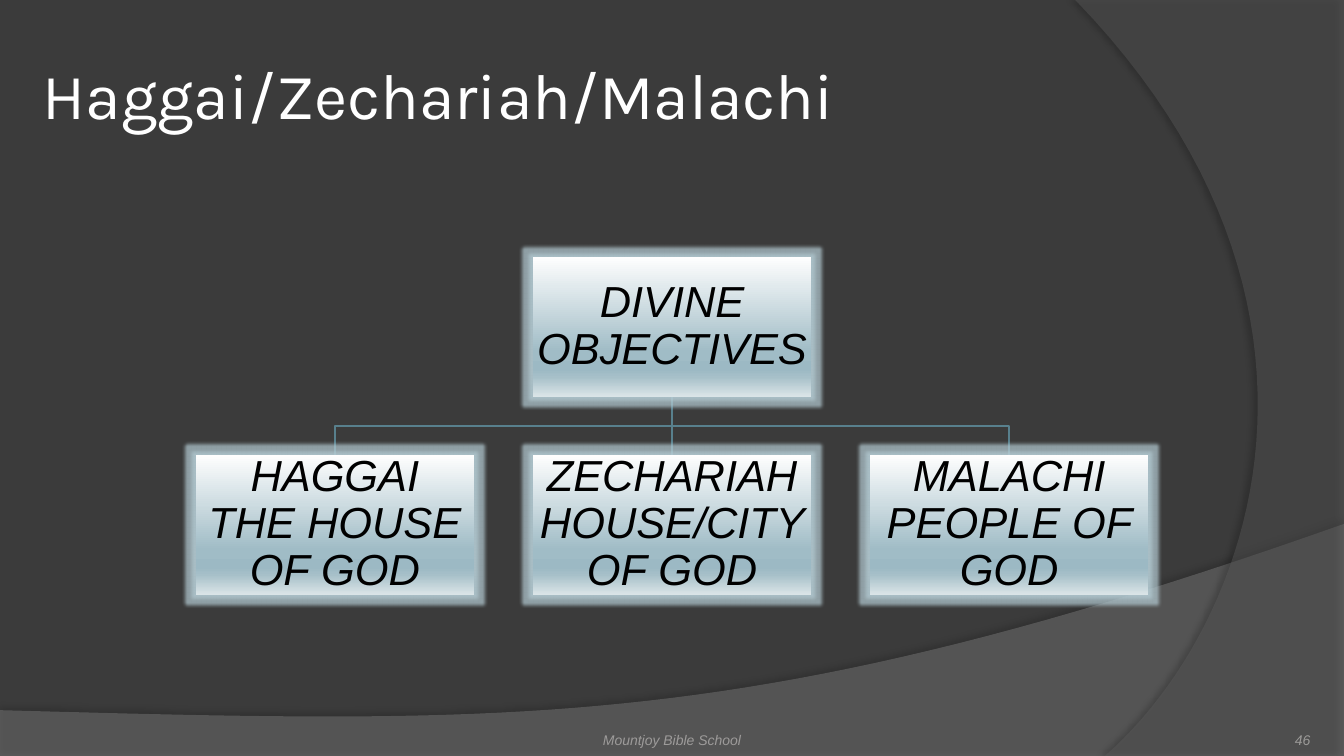
import pptx
import pptx.dml.color
import pptx.enum.dml
import pptx.enum.shapes
import pptx.enum.text
import pptx.oxml
import pptx.util

WIDTH, HEIGHT = pptx.util.Inches(13.333), pptx.util.Inches(7.5)
NAMESPACE = 'xmlns:a="http://schemas.openxmlformats.org/drawingml/2006/main"'
ALIGN = pptx.enum.text.PP_ALIGN
ANCHOR = pptx.enum.text.MSO_ANCHOR
CONNECTOR = pptx.enum.shapes.MSO_CONNECTOR
COLUMN_GAP, ROW_GAP = 0.21, 0.42
CARD_STOPS = [(0, "FEFEFE"), (68, "A0BCC6"), (81, "9CB9C4"), (86, "A7C0C9"), (100, "DAE4E7")]
ROOT = "DIVINE OBJECTIVES"
BRANCHES = ["HAGGAI\nTHE HOUSE OF GOD", "ZECHARIAH\nHOUSE/CITY OF GOD", "MALACHI\nPEOPLE OF GOD"]


def color(value):
    return pptx.dml.color.RGBColor.from_string(value)


def share(left, top, width, height):
    return (round(left * WIDTH), round(top * HEIGHT), round(width * WIDTH), round(height * HEIGHT))


def assign(target, values):
    for name, value in values.items():
        setattr(target, name, value)


def add_xml(parent, body):
    parent.append(pptx.oxml.parse_xml(body.replace(">", f" {NAMESPACE}>", 1)))


def set_effect(shape, effect):
    shape.shadow.inherit = False
    add_xml(shape.shadow._element.effectLst, effect)


def write(shape, text, size, fill, font="Arial", italic=True, align=ALIGN.CENTER,
          anchor=ANCHOR.MIDDLE, inset=0, spacing=1.0):
    frame = shape.text_frame
    margin = pptx.util.Inches(inset)
    assign(frame, {"word_wrap": True, "vertical_anchor": anchor,
                   "auto_size": pptx.enum.text.MSO_AUTO_SIZE.NONE,
                   "margin_left": margin, "margin_right": margin,
                   "margin_top": margin, "margin_bottom": margin})
    paragraph = frame.paragraphs[0]
    paragraph.text = text
    assign(paragraph, {"alignment": align, "line_spacing": spacing})
    for run in paragraph.runs:
        assign(run.font, {"name": font, "size": pptx.util.Pt(size), "italic": italic, "bold": False})
        run.font.color.rgb = color(fill)


def curve(start, first, second, end, steps=48):
    points = []
    for step in range(steps + 1):
        t = step / steps
        weights = ((1 - t) ** 3, 3 * t * (1 - t) ** 2, 3 * t * t * (1 - t), t ** 3)
        points.append(tuple(sum(weight * point[axis] for weight, point
                                in zip(weights, (start, first, second, end)))
                            for axis in range(2)))
    return points


def add_swoosh(slide, box, outline, fill, opacity, shadow):
    left, top, width, height = box
    points = [(round(left + x * width), round(top + y * height)) for x, y in outline]
    builder = slide.shapes.build_freeform(*points[0])
    builder.add_line_segments(points[1:], close=True)
    swoosh = builder.convert_to_shape()
    swoosh.fill.solid()
    swoosh.fill.fore_color.rgb = color(fill)
    swoosh.line.fill.background()
    add_xml(swoosh.fill._xPr.solidFill[0], f'<a:alpha val="{opacity * 1000}"></a:alpha>')
    strength, distance, angle = shadow
    set_effect(swoosh, f'<a:outerShdw blurRad="{pptx.util.Pt(4)}" dist="{pptx.util.Pt(distance)}" '
                       f'dir="{angle * 60000}" algn="ctr" rotWithShape="0"><a:srgbClr val="000000">'
                       f'<a:alpha val="{strength * 1000}"/></a:srgbClr></a:outerShdw>')
    slide.shapes.title._element.addprevious(swoosh._element)


def add_backdrop(slide):
    slide.background.fill.solid()
    slide.background.fill.fore_color.rgb = color("3B3B3B")
    hill = [(0, 1), (1, 1)] + curve((1, 0), (0.56, 0.9), (0.39, 0.86), (0, 0.8))
    add_swoosh(slide, share(0, 0.693, 1, 0.308), hill, "7F7F7F", 45, (35, 3.5, 270))
    arc = [(1, 0), (1, 1)] + curve((0.11, 1), (0.67, 0.825), (1.09, 0.4), (0, 0))
    add_swoosh(slide, share(0.8, 0, 0.2, 1), arc, "5E5E5E", 40, (45, 4, 180))


def add_title(slide, box, text):
    title = slide.shapes.title
    assign(title, dict(zip(("left", "top", "width", "height"), box)))
    write(title, text, 46, "FFFFFF", "Karla", False, ALIGN.LEFT, inset=0.05)


def add_card(slide, box, text):
    card = slide.shapes.add_shape(pptx.enum.shapes.MSO_SHAPE.RECTANGLE, *box)
    card.fill.gradient()
    card.fill.gradient_angle = 270
    stops = card.fill._xPr.gradFill.gsLst
    for stop in list(stops):
        stops.remove(stop)
    for position, value in CARD_STOPS:
        add_xml(stops, f'<a:gs pos="{position * 1000}"><a:srgbClr val="{value}"/></a:gs>')
    card.line.fill.background()
    set_effect(card, f'<a:glow rad="{pptx.util.Inches(0.07)}"><a:srgbClr val="B4CBD3">'
                     '<a:alpha val="70000"/></a:srgbClr></a:glow>')
    write(card, text, 31, "000000", inset=0.02, spacing=0.9)
    return card


def add_link(slide, root, branch):
    start_x, start_y = root.left + root.width // 2, root.top + root.height
    end_x, end_y = branch.left + branch.width // 2, branch.top
    run, drop = end_x - start_x, end_y - start_y
    if run == 0:
        link = slide.shapes.add_connector(CONNECTOR.STRAIGHT, start_x, start_y, end_x, end_y)
        link.begin_connect(root, 2)
        link.end_connect(branch, 0)
    else:
        center_x, center_y = (start_x + end_x) // 2, (start_y + end_y) // 2
        side = 1 if run > 0 else -1
        link = slide.shapes.add_connector(
            CONNECTOR.ELBOW, center_x + side * drop // 2, center_y - abs(run) // 2,
            center_x - side * drop // 2, center_y + abs(run) // 2)
        link._element.spPr.xfrm.set("rot", str((180 + side * 90) * 60000))
    link.line.color.rgb = color("58808D")
    link.line.width = pptx.util.Pt(1.5)
    add_xml(link._element.spPr, "<a:effectLst></a:effectLst>")
    root._element.addprevious(link._element)


def add_tree(slide, box, root_text, branch_texts):
    left, top, width, height = box
    count = len(branch_texts)
    card_width = round(width / (count + (count - 1) * COLUMN_GAP))
    card_height = round(height / (2 + ROW_GAP))
    pitch = card_width * (1 + COLUMN_GAP)
    branch_top = round(top + card_height * (1 + ROW_GAP))
    root = add_card(slide, (round(left + count // 2 * pitch), top, card_width, card_height), root_text)
    for index, text in enumerate(branch_texts):
        branch = add_card(slide, (round(left + index * pitch), branch_top, card_width, card_height), text)
        add_link(slide, root, branch)


def add_footer(slide, box, text, fill, align):
    footer = slide.shapes.add_textbox(*box)
    write(footer, text, 10, fill, align=align, anchor=ANCHOR.BOTTOM)


def main():
    presentation = pptx.Presentation()
    assign(presentation, {"slide_width": WIDTH, "slide_height": HEIGHT})
    slide = presentation.slides.add_slide(presentation.slide_layouts[5])
    add_backdrop(slide)
    add_title(slide, share(0.028, 0.04, 0.945, 0.167), "Haggai/Zechariah/Malachi")
    add_tree(slide, share(0.1455, 0.3403, 0.709, 0.446), ROOT, BRANCHES)
    add_footer(slide, share(0.342, 0.937, 0.316, 0.053), "Mountjoy Bible School", "9D9B9A", ALIGN.CENTER)
    add_footer(slide, share(0.892, 0.937, 0.083, 0.053), "46", "9B9A98", ALIGN.RIGHT)
    presentation.save("out.pptx")


if __name__ == "__main__":
    main()
